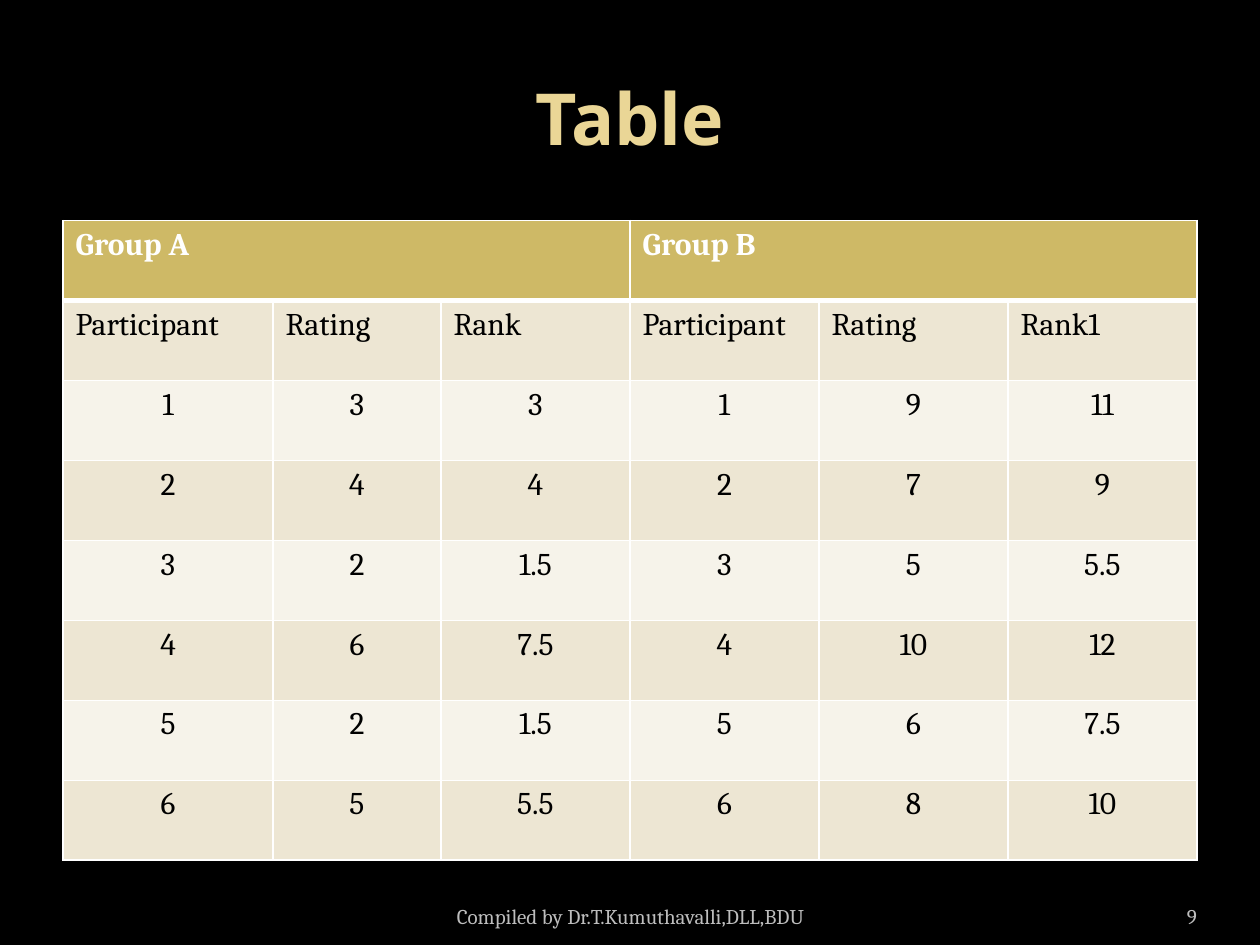
from dataclasses import dataclass

from lxml import etree
from pptx import Presentation
from pptx.dml.color import RGBColor
from pptx.enum.text import MSO_ANCHOR, PP_ALIGN
from pptx.oxml.ns import qn
from pptx.util import Inches, Pt

LEFT, CENTER, RIGHT = PP_ALIGN.LEFT, PP_ALIGN.CENTER, PP_ALIGN.RIGHT
MIDDLE, BOTTOM = MSO_ANCHOR.MIDDLE, MSO_ANCHOR.BOTTOM

BLACK = RGBColor(0x00, 0x00, 0x00)
WHITE = RGBColor(0xFF, 0xFF, 0xFF)
GOLD = RGBColor(0xCE, 0xB9, 0x66)
PALE_GOLD = RGBColor(0xEA, 0xD6, 0x96)
SAND = RGBColor(0xED, 0xE6, 0xD3)
CREAM = RGBColor(0xF6, 0xF3, 0xEA)
GRAY = RGBColor(0xBD, 0xBD, 0xBD)

WIDE, HIGH = Inches(10), Inches(7.5)
EDGE = 0.05                      # side margin, share of the slide width
SPAN = 1 - 2 * EDGE
COLS = (10, 8, 9, 9, 9, 9)       # column widths, in shares of their sum
GROUP = 3                        # columns in one group
HEADS = ("Group A", "Group B")
ROWS = (
    ("Participant", "Rating", "Rank", "Participant", "Rating", "Rank1"),
    ("1", "3", "3", "1", "9", "11"),
    ("2", "4", "4", "2", "7", "9"),
    ("3", "2", "1.5", "3", "5", "5.5"),
    ("4", "6", "7.5", "4", "10", "12"),
    ("5", "2", "1.5", "5", "6", "7.5"),
    ("6", "5", "5.5", "6", "8", "10"),
)


@dataclass(frozen=True)
class Style:
    size: float
    color: RGBColor
    align: PP_ALIGN = LEFT
    bold: bool = False
    font: str = "Cambria"


@dataclass(frozen=True)
class Note:
    """A footer text; left and width are shares of the slide width."""
    text: str
    left: float
    width: float
    inset: float
    align: PP_ALIGN


NOTES = (
    Note("Compiled by Dr.T.Kumuthavalli,DLL,BDU", 0.342, 0.317, 0.1, CENTER),
    Note("9", 0.867, 0.083, 0, RIGHT),
)


def write(frame, text: str, style: Style) -> None:
    line = frame.paragraphs[0]
    line.alignment = style.align
    run = line.add_run()
    run.text = text
    font = run.font
    font.name, font.size, font.bold = style.font, Pt(style.size), style.bold
    font.color.rgb = style.color


def place(shape, left: float, top: float, width: float, height: float) -> None:
    """Set the box of a shape in shares of the slide's size."""
    shape.left, shape.top = int(WIDE * left), int(HIGH * top)
    shape.width, shape.height = int(WIDE * width), int(HIGH * height)


def rule(cell, top: float, base: float) -> None:
    """Draw white borders around a cell, with top and base widths in points."""
    props = cell._tc.get_or_add_tcPr()
    sides = (("a:lnL", 1), ("a:lnR", 1), ("a:lnT", top), ("a:lnB", base))
    for spot, (tag, width) in enumerate(sides):
        line = etree.Element(qn(tag), w=str(Pt(width)))
        fill = etree.SubElement(line, qn("a:solidFill"))
        etree.SubElement(fill, qn("a:srgbClr"), val=str(WHITE))
        props.insert(spot, line)


def add_title(slide) -> None:
    title = slide.shapes.title
    place(title, EDGE, 0.04, SPAN, 1 / 6)
    title.text_frame.vertical_anchor = MIDDLE
    write(title.text_frame, "Table",
          Style(41, PALE_GOLD, CENTER, True, "Noto Sans"))


def add_ranks(slide) -> None:
    count = len(ROWS) + 1
    frame = slide.shapes.add_table(count, len(COLS), 0, 0, WIDE, HIGH)
    place(frame, EDGE, 1.75 / 7.5, SPAN, 5.08 / 7.5)
    table = frame.table
    for col, share in zip(table.columns, COLS):
        col.width = int(WIDE * SPAN * share / sum(COLS))
    for row in table.rows:
        row.height = Inches(5.08 / count)

    for y in range(count):
        shade = GOLD if y == 0 else (SAND if y % 2 else CREAM)
        for x in range(len(COLS)):
            cell = table.cell(y, x)
            cell.fill.solid()
            cell.fill.fore_color.rgb = shade
            rule(cell, 3 if y == 1 else 1, 3 if y == 0 else 1)

    for n, head in enumerate(HEADS):
        cell = table.cell(0, n * GROUP)
        cell.merge(table.cell(0, (n + 1) * GROUP - 1))
        write(cell.text_frame, head, Style(18, WHITE, bold=True))
    for y, row in enumerate(ROWS, start=1):
        style = Style(18, BLACK, LEFT if y == 1 else CENTER)
        for x, text in enumerate(row):
            write(table.cell(y, x).text_frame, text, style)


def add_note(slide, note: Note) -> None:
    box = slide.shapes.add_textbox(0, 0, WIDE, HIGH)
    place(box, note.left, 7.02 / 7.5, note.width, 0.4 / 7.5)
    frame = box.text_frame
    frame.word_wrap = True
    frame.vertical_anchor = BOTTOM
    frame.margin_left = frame.margin_right = Inches(note.inset)
    write(frame, note.text, Style(12, GRAY, note.align))


def main() -> None:
    deck = Presentation()
    deck.slide_width, deck.slide_height = WIDE, HIGH
    slide = deck.slides.add_slide(deck.slide_layouts.get_by_name("Title Only"))
    back = slide.background.fill
    back.solid()
    back.fore_color.rgb = BLACK
    add_title(slide)
    add_ranks(slide)
    for note in NOTES:
        add_note(slide, note)
    deck.save("out.pptx")


if __name__ == "__main__":
    main()
